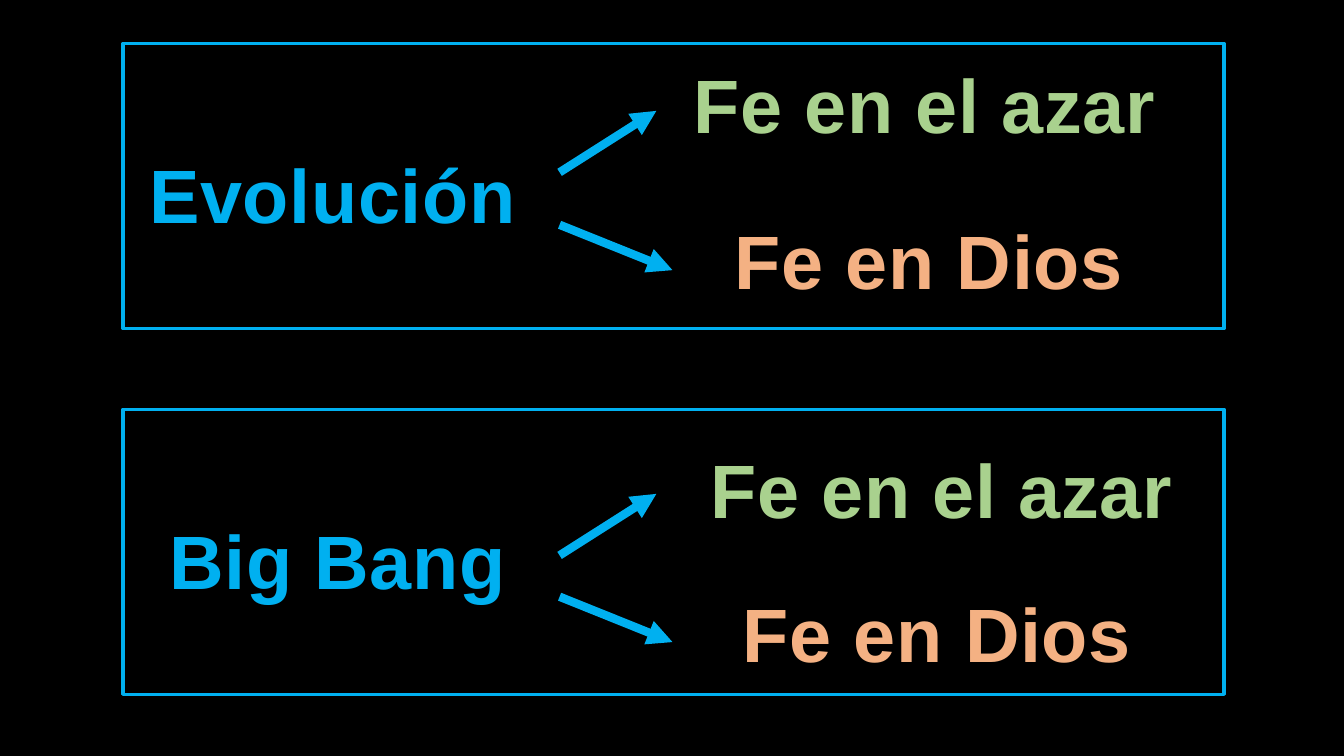
"""Build a slide that sets two theories beside the two faiths each may rest on."""
from lxml import etree
from pptx import Presentation
from pptx.dml.color import RGBColor
from pptx.enum.shapes import MSO_CONNECTOR, MSO_SHAPE
from pptx.enum.text import MSO_AUTO_SIZE, PP_ALIGN
from pptx.oxml.ns import qn
from pptx.util import Inches, Pt

RECT = MSO_SHAPE.RECTANGLE
STRAIGHT = MSO_CONNECTOR.STRAIGHT
CENTER = PP_ALIGN.CENTER
GROW = MSO_AUTO_SIZE.SHAPE_TO_FIT_TEXT
WIDE, HIGH = 13.33, 7.5
COLORS = {"black": "000000", "blue": "00B0F0", "green": "A9D18E", "peach": "F4B183"}
PANELS = [
    {
        "top": 0.43,
        "labels": [
            ("Evolución", "blue", 1.36, 1.42, 3.88, False),
            ("Fe en el azar", "green", 6.75, 0.53, 4.84, False),
            ("Fe en Dios", "peach", 6.84, 2.07, 4.75, True),
        ],
        "starts": (1.71, 2.23),
    },
    {
        "top": 4.06,
        "labels": [
            ("Big Bang", "blue", 1.56, 5.05, 3.58, False),
            ("Fe en el azar", "green", 6.92, 4.34, 4.84, False),
            ("Fe en Dios", "peach", 6.92, 5.77, 4.75, True),
        ],
        "starts": (5.51, 5.92),
    },
]
ARROWS = [(0.96, -0.61), (1.12, 0.45)]


def color(name):
    """Return the named colour."""
    return RGBColor.from_string(COLORS[name])


def add_box(slide, left, top, width, height, edge, weight, fill=None):
    """Add a rectangle, hollow unless a fill is named."""
    box = slide.shapes.add_shape(
        RECT, Inches(left), Inches(top), Inches(width), Inches(height)
    )
    box.shadow.inherit = False
    if fill:
        box.fill.solid()
        box.fill.fore_color.rgb = color(fill)
    else:
        box.fill.background()
    box.line.color.rgb = color(edge)
    box.line.width = Pt(weight)


def add_label(slide, text, tone, left, top, width, wrap):
    """Add a centred line of large bold text."""
    box = slide.shapes.add_textbox(
        Inches(left), Inches(top), Inches(width), Inches(1.01)
    )
    frame = box.text_frame
    frame.word_wrap = wrap
    frame.auto_size = GROW
    para = frame.paragraphs[0]
    para.alignment = CENTER
    run = para.add_run()
    run.text = text
    run.font.name = "Arial"
    run.font.size = Pt(54)
    run.font.bold = True
    run.font.color.rgb = color(tone)
    run.font._element.set("spc", "50")


def add_arrow(slide, left, top, across, down):
    """Add a thick arrow from a point by the given offsets."""
    arrow = slide.shapes.add_connector(
        STRAIGHT, Inches(left), Inches(top), Inches(left + across), Inches(top + down)
    )
    arrow.line.color.rgb = color("blue")
    arrow.line.width = Pt(6)
    etree.SubElement(arrow.line._get_or_add_ln(), qn("a:tailEnd"), type="triangle")
    etree.SubElement(arrow._element.spPr, qn("a:effectLst"))


def add_panel(slide, top, labels, starts):
    """Add a framed theory with arrows to its two faiths."""
    add_box(slide, 1.22, top, 10.92, 2.83, "blue", 2.25)
    for label in labels:
        add_label(slide, *label)
    for start, (across, down) in zip(starts, ARROWS):
        add_arrow(slide, 5.55, start, across, down)


def main():
    """Build and save the slide."""
    deck = Presentation()
    deck.slide_width, deck.slide_height = Inches(WIDE), Inches(HIGH)
    slide = deck.slides.add_slide(deck.slide_layouts[6])
    add_box(slide, 0, 0, WIDE, HIGH, "black", 1, "black")
    for panel in PANELS:
        add_panel(slide, **panel)
    deck.save("out.pptx")


if __name__ == "__main__":
    main()
